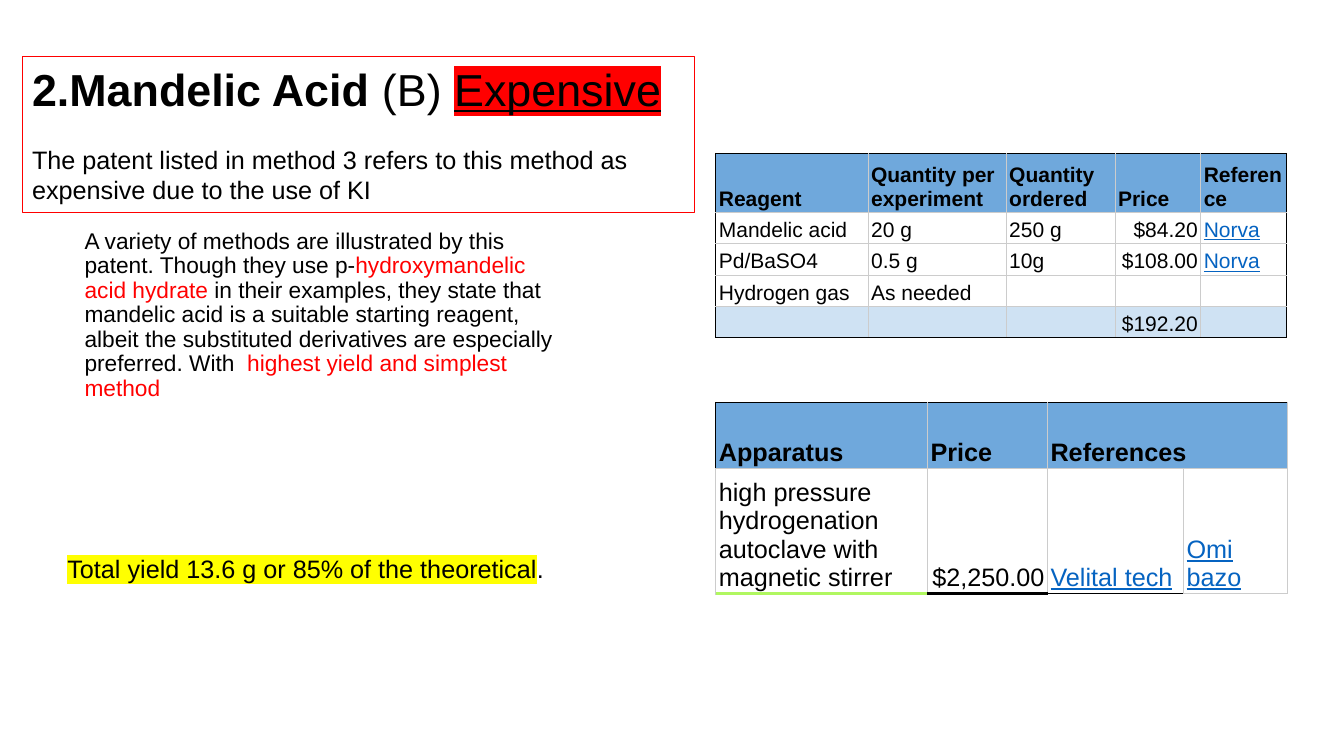
import pptx
import pptx.dml.color
import pptx.enum.shapes
import pptx.enum.text
import pptx.oxml.ns
import pptx.util
from lxml import etree

COLORS = {"ink": "000000", "red": "FF0000", "yellow": "FFFF00", "grid": "CCCCCC",
          "header": "6FA8DC", "total": "CFE2F3", "link": "0563C1", "lime": "B0F760"}
FONT = "Arial"

# Content: each run is (text, style), each paragraph a list of runs
HEADING = [("2.Mandelic Acid ", {"size": 32, "bold": True}), ("(B) ", {"size": 32}),
           ("Expensive", {"size": 32, "underline": True, "highlight": "red"})]
REMARK = [("The patent listed in method 3 refers to this method as expensive "
           "due to the use of KI", {"size": 18})]
METHOD = [("A variety of methods are illustrated by this patent. Though they use p-", {"size": 16.2}),
          ("hydroxymandelic acid hydrate", {"size": 16.2, "color": "red"}),
          (" in their examples, they state that mandelic acid is a suitable starting reagent, "
           "albeit the substituted derivatives are especially preferred. With  ", {"size": 16.2}),
          ("highest yield and simplest method", {"size": 16.2, "color": "red"})]
TOTAL_YIELD = [("Total yield 13.6 g or 85% of the theoretical", {"size": 18, "highlight": "yellow"}),
               (".", {"size": 18})]
REAGENTS = [["Reagent", "Quantity per experiment", "Quantity ordered", "Price", "Reference"],
            ["Mandelic acid", "20 g", "250 g", "$84.20", "Norva"],
            ["Pd/BaSO4", "0.5 g", "10g", "$108.00", "Norva"],
            ["Hydrogen gas", "As needed", "", "", ""],
            ["", "", "", "$192.20", ""]]
APPARATUS = [["Apparatus", "Price", "References", ""],
             ["high pressure hydrogenation autoclave with magnetic stirrer",
              "$2,250.00", "Velital tech", "Omi bazo"]]
SUPPLIERS = {"Norva", "Velital tech", "Omi bazo"}

# Layout in inches
TABLE_LEFT = 7.1
REAGENT_COLS, REAGENT_ROWS = [1.51, 1.37, 1.08, 0.85, 0.85], [0.59] + [0.31] * 4
APPARATUS_COLS, APPARATUS_ROWS = [2.1, 1.19, 1.35, 1.03], [0.66, 1.23]

Inches, Pt = pptx.util.Inches, pptx.util.Pt
qn = pptx.oxml.ns.qn
ANCHOR, ALIGN = pptx.enum.text.MSO_ANCHOR, pptx.enum.text.PP_ALIGN


def rgb(name):
    return pptx.dml.color.RGBColor.from_string(COLORS[name])


def add_color(parent, tag, name):
    holder = etree.SubElement(parent, qn(tag))
    etree.SubElement(holder, qn("a:srgbClr"), val=COLORS[name])
    return holder


def write(paragraph, runs, line_spacing=None):
    paragraph.alignment = ALIGN.LEFT
    if line_spacing:
        paragraph.line_spacing = line_spacing
    for text, style in runs:
        run = paragraph.add_run()
        run.text = text
        font = run.font
        font.name, font.size = FONT, Pt(style["size"])
        font.bold = style.get("bold", False)
        font.underline = style.get("underline", False)
        font.color.rgb = rgb(style.get("color", "ink"))
        if "highlight" in style:
            props = run._r.get_or_add_rPr()
            mark = add_color(props, "a:highlight", style["highlight"])
            props.find(qn("a:solidFill")).addnext(mark)


def add_text(slide, box, runs, margin_top=0.05):
    frame = slide.shapes.add_textbox(*map(Inches, box)).text_frame
    frame.word_wrap = True
    frame.margin_top = Inches(margin_top)
    write(frame.paragraphs[0], runs, 0.9)


def set_borders(cell, borders):
    """borders: (color, points) for left, right, top, bottom."""
    props = cell._tc.get_or_add_tcPr()
    for place, (side, (color, points)) in enumerate(zip("LRTB", borders)):
        line = etree.Element(qn("a:ln" + side), w=str(Pt(points)))
        add_color(line, "a:solidFill", color)
        props.insert(place, line)


def add_table(slide, top, content, cols, rows, size, border, fill):
    frame = slide.shapes.add_table(len(rows), len(cols), Inches(TABLE_LEFT), Inches(top),
                                   Inches(sum(cols)), Inches(sum(rows)))
    table = frame.table
    table.first_row = table.horz_banding = False
    for column, width in zip(table.columns, cols):
        column.width = Inches(width)
    for row, height in zip(table.rows, rows):
        row.height = Inches(height)
    for r, line in enumerate(content):
        for c, text in enumerate(line):
            cell = table.cell(r, c)
            cell.vertical_anchor = ANCHOR.BOTTOM
            cell.margin_left = cell.margin_right = Inches(0.03)
            cell.margin_top = cell.margin_bottom = Inches(0.02)
            if fill(r):
                cell.fill.solid()
                cell.fill.fore_color.rgb = rgb(fill(r))
            else:
                cell.fill.background()
            set_borders(cell, border(r, c))
            paragraph = cell.text_frame.paragraphs[0]
            if text:
                linked = text in SUPPLIERS
                write(paragraph, [(text, {"size": size, "bold": r == 0, "underline": linked,
                                          "color": "link" if linked else "ink"})])
            else:
                etree.SubElement(paragraph._p, qn("a:endParaRPr"), sz=str(size * 100))
            if text.startswith("$"):
                paragraph.alignment = ALIGN.RIGHT
    return table


def reagent_border(r, c):
    outer = (c == 0, c == len(REAGENT_COLS) - 1, r == 0, r == len(REAGENT_ROWS) - 1)
    return [("ink" if edge else "grid", 0.75) for edge in outer]


def apparatus_border(r, c):
    bottoms = [("lime", 2.25), ("ink", 2.25), ("ink", 0.75), ("grid", 0.75)]
    return [("ink" if r == c == 0 else "grid", 0.75), ("grid", 0.75),
            ("ink" if r == 0 else "grid", 0.75), bottoms[c] if r else ("grid", 0.75)]


def main():
    deck = pptx.Presentation()
    deck.slide_width, deck.slide_height = Inches(13.33), Inches(7.5)
    slide = deck.slides.add_slide(deck.slide_layouts[6])

    # Method and yield
    add_text(slide, (0.74, 2.23, 5.01, 1.8), METHOD)
    add_text(slide, (0.57, 4.65, 5.67, 1.83), TOTAL_YIELD, margin_top=0.87)

    # Reagent prices
    add_table(slide, 1.52, REAGENTS, REAGENT_COLS, REAGENT_ROWS, 15, reagent_border,
              {0: "header", 4: "total"}.get)

    # Framed heading
    heading = slide.shapes.add_shape(pptx.enum.shapes.MSO_SHAPE.RECTANGLE,
                                     *map(Inches, (0.22, 0.56, 6.67, 1.55)))
    heading.shadow.inherit = False
    heading.fill.background()
    heading.line.color.rgb = rgb("red")
    heading.line.width = Pt(0.75)
    frame = heading.text_frame
    frame.word_wrap = True
    frame.vertical_anchor = ANCHOR.TOP
    write(frame.paragraphs[0], HEADING)
    remark = frame.add_paragraph()
    remark.space_before = Pt(20.7)
    write(remark, REMARK)

    # Apparatus prices
    apparatus = add_table(slide, 3.99, APPARATUS, APPARATUS_COLS, APPARATUS_ROWS, 18,
                          apparatus_border, {0: "header"}.get)
    apparatus.cell(0, 2).merge(apparatus.cell(0, 3))

    deck.save("out.pptx")


if __name__ == "__main__":
    main()
